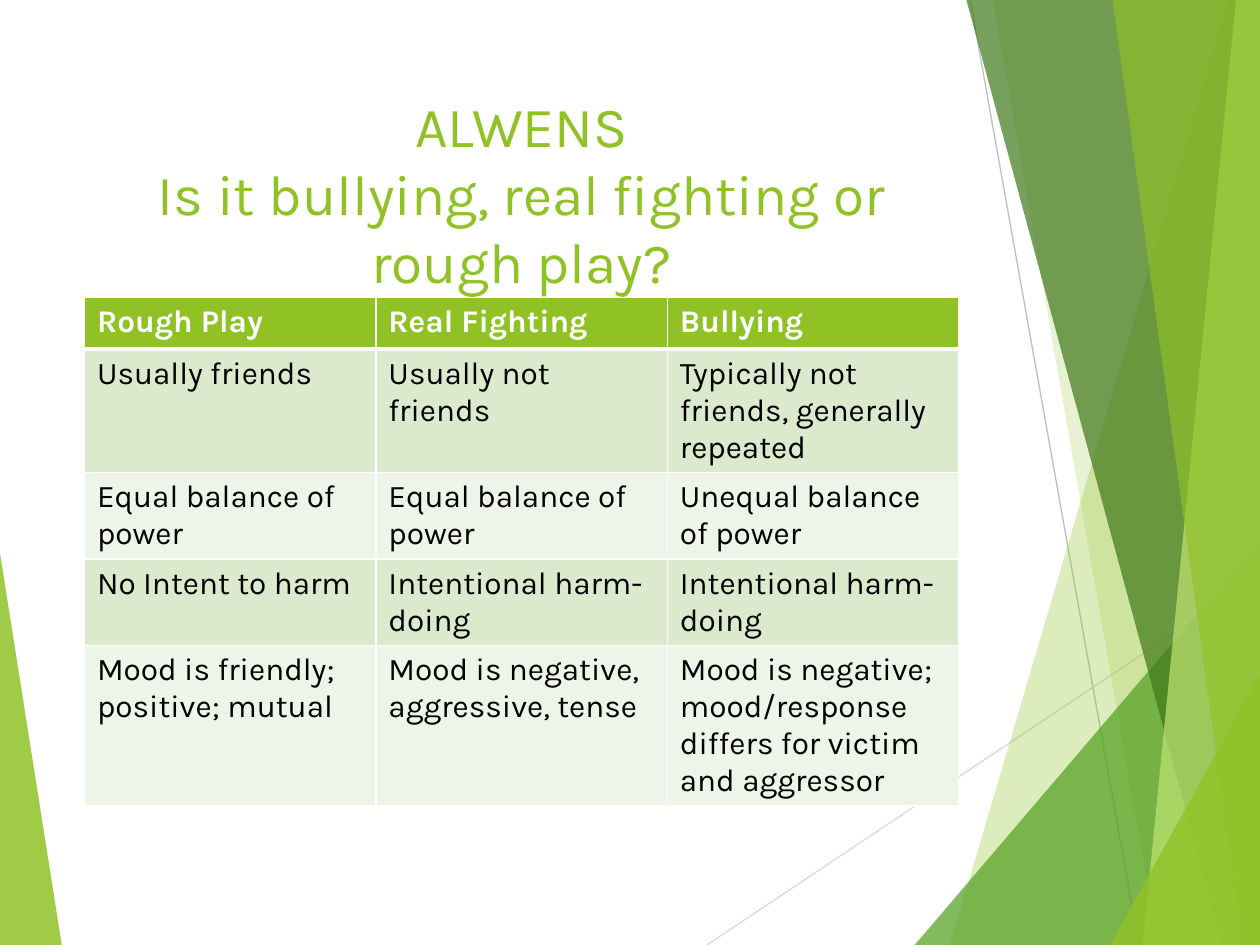
from pptx import Presentation
from pptx.util import Inches, Pt
from pptx.dml.color import RGBColor as RGB
from pptx.enum.shapes import MSO_CONNECTOR as Conn
from pptx.enum.text import PP_ALIGN as Align, MSO_ANCHOR as Anchor, MSO_AUTO_SIZE as Auto
from pptx.oxml.ns import qn
from lxml.etree import SubElement as Sub

THEME = dict(
    font="Karla", head=32.4, body=18,
    lime="90C226", green="54A021", dark="3F7819", pale="C0E474",
    white="FFFFFF", black="000000", bands=("DBE9CD", "EEF4E8"),
)
WIDE, HIGH = 10, 7.5

TITLE = "ALWENS\nIs it bullying, real fighting or rough play?"
ROWS = [
    ("Rough Play", "Real Fighting", "Bullying"),
    ("Usually friends", "Usually not friends", "Typically not friends, generally repeated"),
    ("Equal balance of power", "Equal balance of power", "Unequal balance of power"),
    ("No Intent to harm", "Intentional harm-doing", "Intentional harm-doing"),
    ("Mood is friendly; positive; mutual", "Mood is negative, aggressive, tense",
     "Mood is negative; mood/response differs for victim and aggressor"),
]
LINES = [
    ((5.61, HIGH), (WIDE, 4.57), "D9D9D9"),
    ((7.7, 0), (9.04, HIGH), "BFBFBF"),
]
LEFT = [([(0, 4.39), (0.49, HIGH), (0, HIGH)], "lime", 85)]
RIGHT = [
    ([(WIDE, 0), (9.75, 0), (7.54, HIGH), (WIDE, HIGH)], "lime", 30),
    ([(WIDE, 0), (7.88, 0), (9.19, HIGH), (WIDE, HIGH)], "lime", 20),
    ([(WIDE, 4.29), (7.26, HIGH), (WIDE, HIGH)], "green", 72),
    ([(WIDE, 0), (7.67, 0), (9.7, HIGH), (WIDE, HIGH)], "dark", 70),
    ([(WIDE, 0), (9.81, 0), (9.07, HIGH), (WIDE, HIGH)], "pale", 70),
    ([(WIDE, 0), (8.83, 0), (9.86, HIGH), (WIDE, HIGH)], "lime", 65),
    ([(WIDE, 5.35), (8.81, HIGH), (WIDE, HIGH)], "lime", 80),
]


def write(frame, text, size, color, bold=False, align=Align.LEFT):
    para = frame.paragraphs[0]
    para.text = text.replace("\n", "\v")
    para.alignment = align
    for run in para.runs:
        font = run.font
        font.name, font.size, font.bold = THEME["font"], Pt(size), bold
        font.color.rgb = RGB.from_string(color)


def draw_shard(slide, points, tone, alpha):
    spots = [(Inches(x), Inches(y)) for x, y in points]
    pen = slide.shapes.build_freeform(*spots[0])
    pen.add_line_segments(spots[1:], close=True)
    shard = pen.convert_to_shape()
    shard.shadow.inherit = False
    shard.line.fill.background()
    shard.fill.solid()
    shard.fill.fore_color.rgb = RGB.from_string(THEME[tone])
    tint = shard.fill._xPr.find(qn("a:solidFill"))[0]
    Sub(tint, qn("a:alpha"), val=str(alpha * 1000))


def draw_line(slide, start, end, color):
    ends = [Inches(n) for n in start + end]
    line = slide.shapes.add_connector(Conn.STRAIGHT, *ends)
    line.line.color.rgb = RGB.from_string(color)
    line.line.width = Pt(0.75)
    Sub(line._element.spPr, qn("a:effectLst"))


def edge_cell(cell, base):
    props = cell._tc.get_or_add_tcPr()
    widths = dict(lnL=1, lnR=1, lnT=1, lnB=base)
    for spot, (side, width) in enumerate(widths.items()):
        edge = Sub(props, qn("a:" + side), w=str(Pt(width)))
        Sub(Sub(edge, qn("a:solidFill")), qn("a:srgbClr"), val=THEME["white"])
        props.insert(spot, edge)


def fill_table(slide):
    box = [Inches(n) for n in (0.67, 2.36, 6.94, 0.41 * len(ROWS))]
    table = slide.shapes.add_table(len(ROWS), len(ROWS[0]), *box).table
    for r, row in enumerate(ROWS):
        top = r == 0
        back = THEME["lime"] if top else THEME["bands"][(r - 1) % 2]
        for c, text in enumerate(row):
            cell = table.cell(r, c)
            cell.fill.solid()
            cell.fill.fore_color.rgb = RGB.from_string(back)
            edge_cell(cell, 3 if top else 1)
            write(cell.text_frame, text, THEME["body"],
                  THEME["white" if top else "black"], bold=top)


def set_title(slide):
    title = slide.shapes.title
    title.left, title.top, title.width, title.height = (
        Inches(n) for n in (0.67, 0.67, 6.94, 1.44))
    frame = title.text_frame
    frame.word_wrap, frame.auto_size = True, Auto.NONE
    frame.vertical_anchor = Anchor.TOP
    write(frame, TITLE, THEME["head"], THEME["lime"], align=Align.CENTER)


def main():
    deck = Presentation()
    deck.slide_width, deck.slide_height = Inches(WIDE), Inches(HIGH)
    slide = deck.slides.add_slide(deck.slide_layouts[5])
    for shard in LEFT:
        draw_shard(slide, *shard)
    for line in LINES:
        draw_line(slide, *line)
    for shard in RIGHT:
        draw_shard(slide, *shard)
    set_title(slide)
    fill_table(slide)
    deck.save("out.pptx")


if __name__ == "__main__":
    main()
